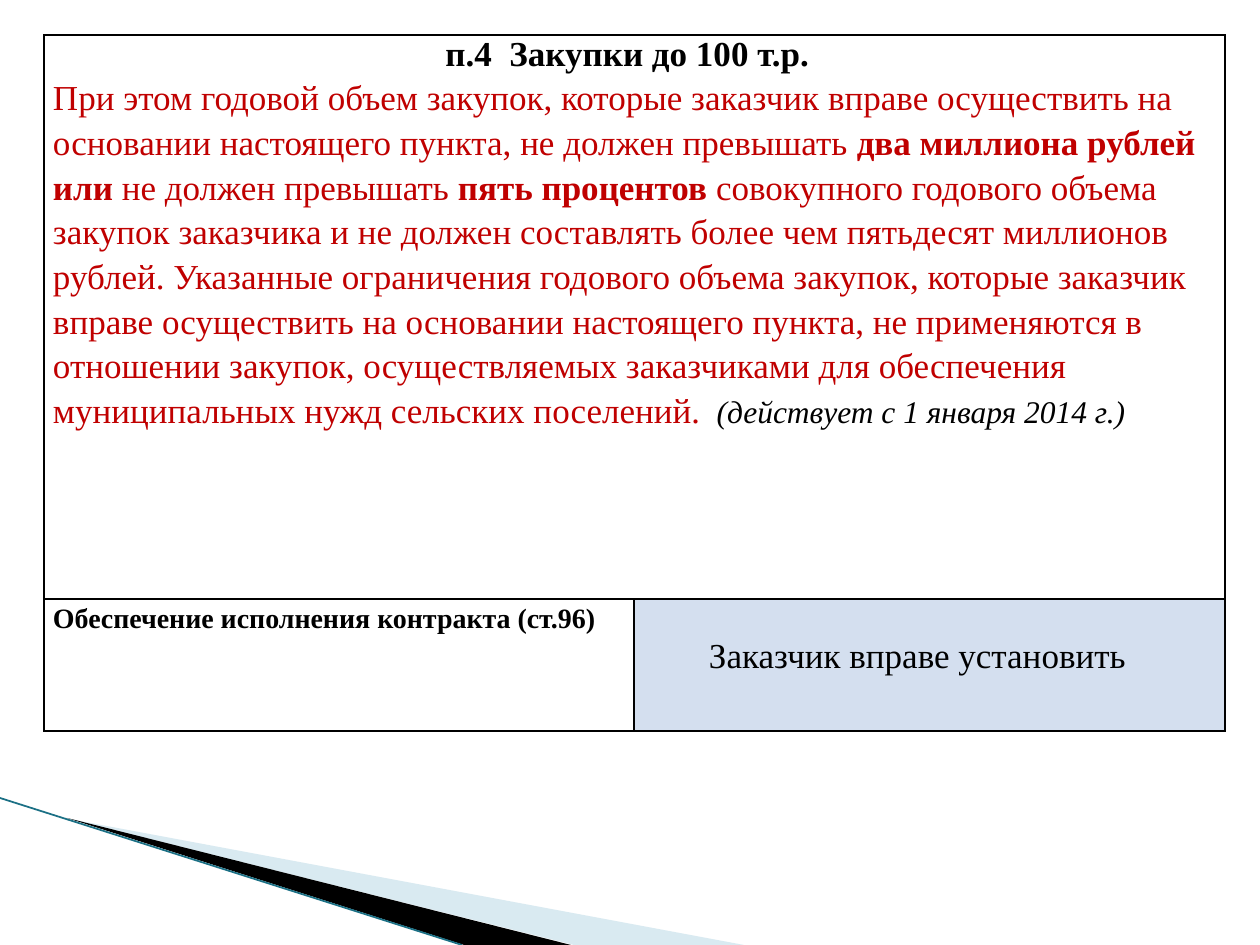
from dataclasses import dataclass

from lxml import etree
from pptx import Presentation
from pptx.dml.color import RGBColor
from pptx.enum.shapes import MSO_CONNECTOR
from pptx.enum.text import PP_ALIGN
from pptx.oxml.ns import qn
from pptx.util import Pt

STRAIGHT = MSO_CONNECTOR.STRAIGHT
LEFT, CENTER = PP_ALIGN.LEFT, PP_ALIGN.CENTER
EMU_PER_PX = 914400 / 126


@dataclass(frozen=True)
class Theme:
    font: str = "Times New Roman"
    ink: str = "000000"
    accent: str = "C00000"
    highlight: str = "D4DFEF"
    swoosh: str = "A0CBDC"
    edge: str = "1B7085"
    body: int = 20
    note: int = 18
    label: int = 16


def px(length):
    return round(length * EMU_PER_PX)


def add_run(paragraph, text, size, color, font, bold=False, italic=False):
    run = paragraph.add_run()
    run.text = text
    run.font.name = font
    run.font.size = Pt(size)
    run.font.bold = bold
    run.font.italic = italic
    run.font.color.rgb = RGBColor.from_string(color)


class SlideBuilder:
    def __init__(self, slide, theme):
        self.slide = slide
        self.theme = theme

    def wedge(self, points, color, opacity=None):
        """Draw a filled polygon; opacity is a percentage."""
        outline = self.slide.shapes.build_freeform(*points[0], scale=EMU_PER_PX)
        outline.add_line_segments(points[1:], close=True)
        shape = outline.convert_to_shape()
        shape.shadow.inherit = False
        shape.fill.solid()
        shape.fill.fore_color.rgb = RGBColor.from_string(color)
        shape.line.fill.background()
        if opacity is not None:
            tint = shape._element.spPr.find(qn("a:solidFill")).find(qn("a:srgbClr"))
            etree.SubElement(tint, qn("a:alpha"), val=str(opacity * 1000))

    def line(self, start, end, color, width):
        connector = self.slide.shapes.add_connector(
            STRAIGHT, *(px(value) for value in (*start, *end)))
        connector.line.color.rgb = RGBColor.from_string(color)
        connector.line.width = Pt(width)
        etree.SubElement(connector._element.spPr, qn("a:effectLst"))

    def table(self, left, top, columns, rows):
        """Add a table with plain cells and a thin border round each."""
        frame = self.slide.shapes.add_table(
            len(rows), len(columns), px(left), px(top), px(sum(columns)), px(sum(rows)))
        grid = frame.table
        grid.first_row = grid.horz_banding = False
        for column, width in zip(grid.columns, columns):
            column.width = px(width)
        for row, height in zip(grid.rows, rows):
            row.height = px(height)
        for cell in grid.iter_cells():
            cell.margin_left = cell.margin_right = px(9)
            cell.margin_top = cell.margin_bottom = 0
            self.borders(cell)
            cell.fill.background()
        return grid

    def borders(self, cell):
        properties = cell._tc.get_or_add_tcPr()
        for side in ("L", "R", "T", "B"):
            border = etree.SubElement(properties, qn(f"a:ln{side}"), w=str(Pt(1)))
            fill = etree.SubElement(border, qn("a:solidFill"))
            etree.SubElement(fill, qn("a:srgbClr"), val=self.theme.ink)

    def fill_paragraph(self, paragraph, runs, align=LEFT, spacing=None):
        """Fill a paragraph from (text, format) pairs."""
        paragraph.alignment = align
        paragraph.line_spacing = spacing
        defaults = dict(size=self.theme.body, color=self.theme.ink, font=self.theme.font)
        for text, style in runs:
            add_run(paragraph, text, **{**defaults, **style})


def main():
    theme = Theme()
    presentation = Presentation()
    presentation.slide_width, presentation.slide_height = px(1260), px(945)
    slide = presentation.slides.add_slide(presentation.slide_layouts[6])
    builder = SlideBuilder(slide, theme)

    builder.wedge([(69, 819), (744, 945), (574, 945)], theme.swoosh, opacity=40)
    builder.wedge([(67, 818), (571, 945), (464, 945)], theme.ink)
    builder.line((0, 798), (462, 945), theme.edge, 1)

    terms = builder.table(44, 35, columns=(590, 591), rows=(564, 132))
    purchase_cell = terms.cell(0, 0)
    purchase_cell.merge(terms.cell(0, 1))
    security_cell, decision_cell = terms.cell(1, 0), terms.cell(1, 1)

    regular = dict(color=theme.accent)
    strong = dict(color=theme.accent, bold=True)
    heading = purchase_cell.text_frame.paragraphs[0]
    builder.fill_paragraph(
        heading, [("п.4  Закупки до 100 т.р. \t", dict(bold=True))], align=CENTER)
    builder.fill_paragraph(purchase_cell.text_frame.add_paragraph(), [
        ("При этом годовой объем закупок, которые заказчик вправе осуществить на "
         "основании настоящего пункта, не должен превышать ", regular),
        ("два миллиона рублей или", strong),
        (" не должен превышать ", regular),
        ("пять процентов ", strong),
        ("совокупного годового объема закупок заказчика и не должен составлять более "
         "чем пятьдесят миллионов рублей. Указанные ограничения годового объема закупок, "
         "которые заказчик вправе осуществить на основании настоящего пункта, не "
         "применяются в отношении закупок, осуществляемых заказчиками для обеспечения "
         "муниципальных нужд сельских поселений", regular),
        (".", dict(color=theme.accent, italic=True)),
        ("  (действует с 1 января 2014 г.)", dict(size=theme.note, italic=True)),
    ], spacing=1.15)

    builder.fill_paragraph(security_cell.text_frame.paragraphs[0], [
        ("Обеспечение исполнения контракта (ст.96)", dict(size=theme.label, bold=True)),
    ], spacing=1.15)

    decision_cell.fill.solid()
    decision_cell.fill.fore_color.rgb = RGBColor.from_string(theme.highlight)
    decision_cell.margin_top = px(38)
    builder.fill_paragraph(decision_cell.text_frame.paragraphs[0],
                           [("Заказчик вправе установить\t", {})], align=CENTER)

    presentation.save("out.pptx")


if __name__ == "__main__":
    main()
